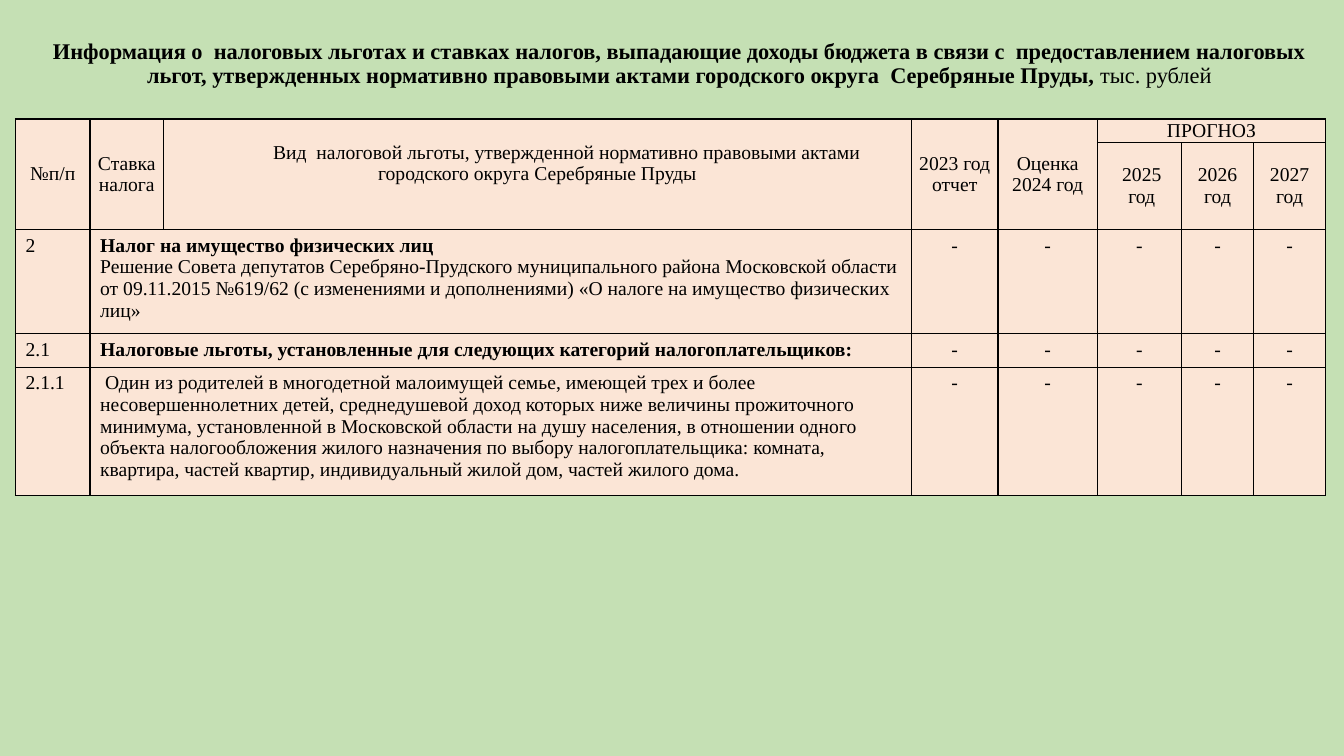
from lxml.etree import SubElement
from pptx import Presentation
from pptx.dml.color import RGBColor
from pptx.enum.text import MSO_ANCHOR as Anchor, PP_ALIGN as Align
from pptx.oxml.ns import qn
from pptx.util import Cm, Pt

GREEN = RGBColor(0xC5, 0xE0, 0xB4)
PEACH = RGBColor(0xFB, 0xE5, 0xD6)
BLACK = RGBColor(0, 0, 0)
FONT = "Times New Roman"

COLUMN_WIDTHS = [1.88, 1.85, 18.85, 2.18, 2.51, 2.11, 1.83, 1.8]
ROW_HEIGHTS = [0.53, 2.19, 2.44, 0.81, 2.97]
MERGES = [((0, column), (1, column)) for column in range(5)]
MERGES += [((0, 5), (0, 7))] + [((row, 1), (row, 2)) for row in (2, 3, 4)]

HEADINGS = {
    (0, 0): ["№п/п"],
    (0, 1): ["Ставка налога"],
    (0, 2): ["Вид  налоговой льготы, утвержденной нормативно правовыми актами "
             "городского округа Серебряные Пруды"],
    (0, 3): ["2023 год", "отчет"],
    (0, 4): ["Оценка", "2024 год"],
    (0, 5): ["ПРОГНОЗ"],
    (1, 5): ["2025 год"],
    (1, 6): ["2026 год"],
    (1, 7): ["2027 год"],
}
BENEFITS = [
    ("2", [("Налог на имущество физических лиц", True),
           ("Решение Совета депутатов Серебряно-Прудского муниципального района "
            "Московской области от 09.11.2015 №619/62 (с изменениями и дополнениями) "
            "«О налоге на имущество физических лиц»", False)]),
    ("2.1", [("Налоговые льготы, установленные для следующих категорий "
              "налогоплательщиков:", True)]),
    ("2.1.1", [(" Один из родителей в многодетной малоимущей семье, имеющей трех и более "
                "несовершеннолетних детей, среднедушевой доход которых ниже величины "
                "прожиточного минимума, установленной в Московской области на душу "
                "населения, в отношении одного объекта налогообложения жилого назначения "
                "по выбору налогоплательщика: комната, квартира, частей квартир, "
                "индивидуальный жилой дом, частей жилого дома.", False)]),
]


def add_run(paragraph, text, size, bold=False):
    """Append a black run in the slide font."""
    run = paragraph.add_run()
    run.text = text
    run.font.name = FONT
    run.font.size = Pt(size)
    run.font.bold = bold
    run.font.color.rgb = BLACK


def fill_cell(cell, lines, align):
    """Write (text, bold) lines into a cell, one paragraph each."""
    frame = cell.text_frame
    for index, (text, bold) in enumerate(lines):
        paragraph = frame.add_paragraph() if index else frame.paragraphs[0]
        paragraph.alignment = align
        add_run(paragraph, text, 14, bold)


def style_cell(cell):
    """Give a cell thin black borders and the peach fill."""
    properties = cell._tc.get_or_add_tcPr()
    for side in ("a:lnL", "a:lnR", "a:lnT", "a:lnB"):
        border = SubElement(properties, qn(side), w=str(Pt(1)))
        solid = SubElement(border, qn("a:solidFill"))
        SubElement(solid, qn("a:srgbClr"), val=str(BLACK))
    cell.fill.solid()
    cell.fill.fore_color.rgb = PEACH


def add_title(slide, left, top, width, height):
    """Place the slide heading with its unit of measure."""
    frame = slide.shapes.add_textbox(left, top, width, height).text_frame
    frame.word_wrap = True
    frame.vertical_anchor = Anchor.MIDDLE
    heading = frame.paragraphs[0]
    heading.alignment = Align.CENTER
    heading.line_spacing = 0.9
    add_run(heading, "Информация о  налоговых льготах и ставках налогов, выпадающие доходы "
                     "бюджета в связи с  предоставлением налоговых льгот, утвержденных "
                     "нормативно правовыми актами городского округа  Серебряные Пруды, ",
            16, True)
    add_run(heading, "тыс. рублей", 16)


def fill_headings(table):
    """Write the two heading rows, centred in their cells."""
    for (row, column), lines in HEADINGS.items():
        cell = table.cell(row, column)
        cell.vertical_anchor = Anchor.MIDDLE
        cell.margin_left = cell.margin_right = Cm(0.18)
        cell.margin_top = cell.margin_bottom = 0
        fill_cell(cell, [(line, False) for line in lines], Align.CENTER)
    benefit_heading = table.cell(0, 2)
    benefit_heading.margin_bottom = Cm(0.55)
    indent = benefit_heading.text_frame.paragraphs[0]._p.get_or_add_pPr()
    indent.set("indent", str(Cm(1.48)))
    table.cell(1, 5).margin_left = Cm(0.3)


def add_benefits_table(slide, left, top, width, height):
    """Place the table of tax benefits in the given box."""
    table = slide.shapes.add_table(len(ROW_HEIGHTS), len(COLUMN_WIDTHS),
                                   left, top, width, height).table
    table.first_row = table.horz_banding = False
    for column, share in zip(table.columns, COLUMN_WIDTHS):
        column.width = int(width * share / sum(COLUMN_WIDTHS))
    for row, share in zip(table.rows, ROW_HEIGHTS):
        row.height = int(height * share / sum(ROW_HEIGHTS))
    for cell in table.iter_cells():
        style_cell(cell)
    for first, last in MERGES:
        table.cell(*first).merge(table.cell(*last))
    fill_headings(table)
    for row, (number, benefit) in enumerate(BENEFITS, start=2):
        fill_cell(table.cell(row, 0), [(number, False)], Align.LEFT)
        fill_cell(table.cell(row, 1), benefit, Align.LEFT)
        for column in range(3, len(COLUMN_WIDTHS)):
            fill_cell(table.cell(row, column), [("-", False)], Align.CENTER)


def main():
    """Build and save the slide."""
    deck = Presentation()
    deck.slide_width, deck.slide_height = Cm(33.87), Cm(19.05)
    slide = deck.slides.add_slide(deck.slide_layouts[6])
    slide.background.fill.solid()
    slide.background.fill.fore_color.rgb = GREEN
    add_title(slide, Cm(0.38), 0, Cm(33.48), Cm(3.25))
    add_benefits_table(slide, Cm(0.39), Cm(3), Cm(33.01), Cm(8.94))
    deck.save("out.pptx")


if __name__ == "__main__":
    main()
